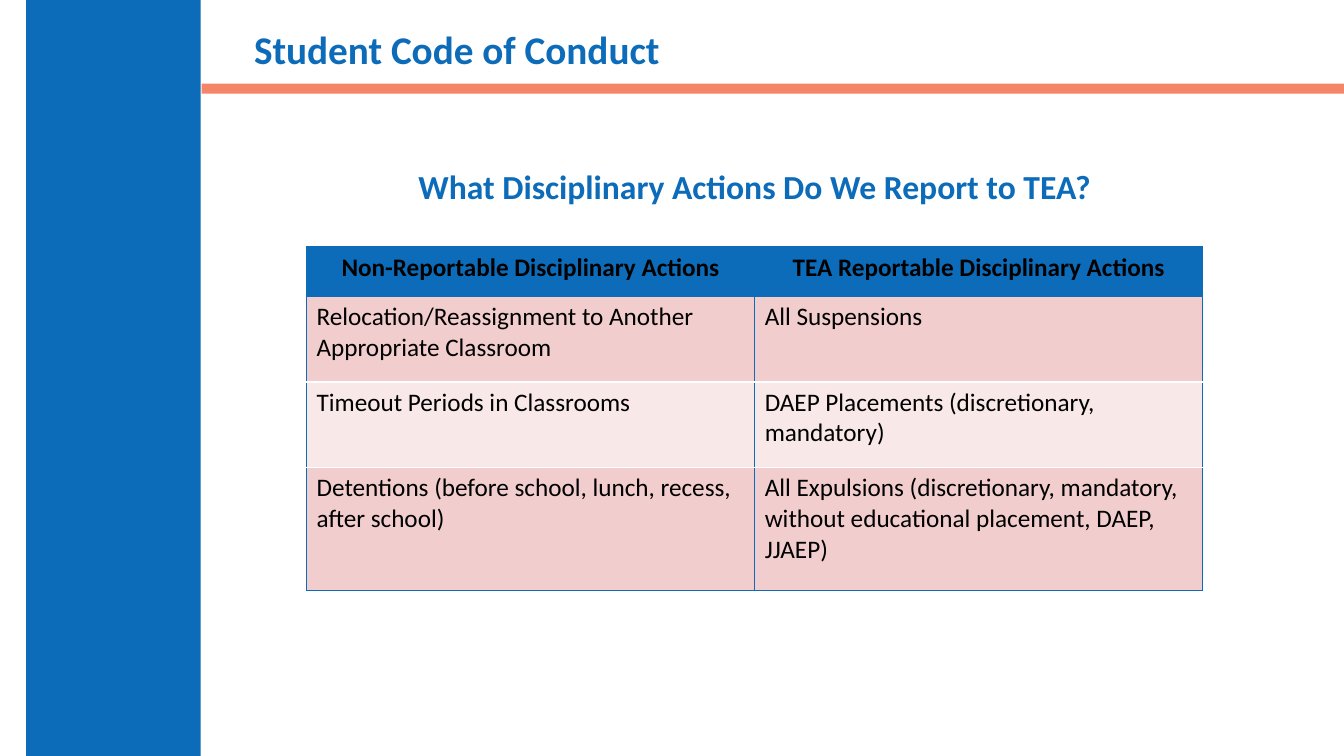
"""Build the Student Code of Conduct slide with its table of disciplinary actions."""
from dataclasses import dataclass

from lxml import etree
from pptx import Presentation
from pptx.dml.color import RGBColor
from pptx.enum.shapes import MSO_SHAPE
from pptx.enum.text import MSO_ANCHOR, MSO_AUTO_SIZE, PP_ALIGN
from pptx.oxml.ns import qn
from pptx.util import Inches, Pt

RECTANGLE = MSO_SHAPE.RECTANGLE
LEFT, CENTER = PP_ALIGN.LEFT, PP_ALIGN.CENTER
TOP, MIDDLE = MSO_ANCHOR.TOP, MSO_ANCHOR.MIDDLE
NO_AUTOFIT = MSO_AUTO_SIZE.NONE


@dataclass(frozen=True)
class Theme:
    font: str = "Calibri"
    blue: str = "0D6CB9"
    coral: str = "F16038"
    white: str = "FFFFFF"
    black: str = "000000"
    bands: tuple[str, str] = ("F1CECD", "F8E8E8")
    title_size: int = 28
    heading_size: int = 24
    table_size: int = 18
    border_width: int = 1


@dataclass(frozen=True)
class Box:
    left: float
    top: float
    width: float
    height: float

    def lengths(self) -> tuple:
        return tuple(map(Inches, (self.left, self.top, self.width, self.height)))


@dataclass(frozen=True)
class Bar:
    box: Box
    color: str
    opacity: int = 100


@dataclass(frozen=True)
class Heading:
    text: str
    box: Box
    size: int
    align: PP_ALIGN
    anchor: MSO_ANCHOR


THEME = Theme()
BARS = (
    Bar(Box(2, 0.83, 11.34, 0.1), THEME.coral, 76),
    Bar(Box(0.26, 0, 1.73, 7.5), THEME.blue),
)
TITLE = Heading("Student Code of Conduct", Box(2.42, 0.22, 10.41, 0.59),
                THEME.title_size, LEFT, MIDDLE)
QUESTION = Heading("What Disciplinary Actions Do We Report to TEA?", Box(2.57, 1.64, 9.83, 4.76),
                   THEME.heading_size, CENTER, TOP)
TABLE_BOX = Box(3.04, 2.45, 8.89, 3.41)
ROW_HEIGHTS = (0.49, 0.85, 0.85, 1.22)
ACTIONS = (
    ("Non-Reportable Disciplinary Actions", "TEA Reportable Disciplinary Actions"),
    ("Relocation/Reassignment to Another Appropriate Classroom", "All Suspensions"),
    ("Timeout Periods in Classrooms", "DAEP Placements (discretionary, mandatory)"),
    ("Detentions (before school, lunch, recess, after school)",
     "All Expulsions (discretionary, mandatory, without educational placement, DAEP, JJAEP)"),
)


def style_font(paragraph, size: int, color: str, bold: bool) -> None:
    font = paragraph.font
    font.name, font.size, font.bold = THEME.font, Pt(size), bold
    font.color.rgb = RGBColor.from_string(color)


def draw_bar(slide, bar: Bar) -> None:
    shape = slide.shapes.add_shape(RECTANGLE, *bar.box.lengths())
    shape.shadow.inherit = False
    shape.line.fill.background()
    shape.fill.solid()
    shape.fill.fore_color.rgb = RGBColor.from_string(bar.color)
    if bar.opacity < 100:
        color = shape.fill._xPr.find(f".//{qn('a:srgbClr')}")
        etree.SubElement(color, qn("a:alpha"), val=str(bar.opacity * 1000))


def fill_placeholder(placeholder, heading: Heading) -> None:
    (placeholder.left, placeholder.top,
     placeholder.width, placeholder.height) = heading.box.lengths()
    frame = placeholder.text_frame
    frame.text = heading.text
    frame.word_wrap = True
    frame.auto_size = NO_AUTOFIT
    frame.vertical_anchor = heading.anchor
    paragraph = frame.paragraphs[0]
    properties = paragraph._p.get_or_add_pPr()
    properties.set("marL", "0")
    properties.set("indent", "0")
    etree.SubElement(properties, qn("a:buNone"))
    paragraph.alignment = heading.align
    paragraph.line_spacing = 0.9
    paragraph.space_before = Pt(0)
    style_font(paragraph, heading.size, THEME.blue, True)


def set_borders(cell, top: str, bottom: str) -> None:
    properties = cell._tc.get_or_add_tcPr()
    for side, color in zip("LRTB", (THEME.blue, THEME.blue, top, bottom)):
        line = etree.SubElement(properties, qn(f"a:ln{side}"), w=str(Pt(THEME.border_width)))
        fill = etree.SubElement(line, qn("a:solidFill"))
        etree.SubElement(fill, qn("a:srgbClr"), val=color)


def draw_table(slide) -> None:
    row_count, column_count = len(ACTIONS), len(ACTIONS[0])
    table = slide.shapes.add_table(row_count, column_count, *TABLE_BOX.lengths()).table
    edges = [THEME.blue] * 2 + [THEME.white] * (row_count - 2) + [THEME.blue]
    for row_index, (texts, height) in enumerate(zip(ACTIONS, ROW_HEIGHTS)):
        table.rows[row_index].height = Inches(height)
        is_header = row_index == 0
        fill_color = THEME.blue if is_header else THEME.bands[(row_index - 1) % 2]
        for column_index, text in enumerate(texts):
            cell = table.cell(row_index, column_index)
            set_borders(cell, edges[row_index], edges[row_index + 1])
            cell.fill.solid()
            cell.fill.fore_color.rgb = RGBColor.from_string(fill_color)
            cell.text = text
            paragraph = cell.text_frame.paragraphs[0]
            paragraph.alignment = CENTER if is_header else LEFT
            style_font(paragraph, THEME.table_size, THEME.black, is_header)


def main() -> None:
    presentation = Presentation()
    presentation.slide_width, presentation.slide_height = Inches(13.33), Inches(7.5)
    slide = presentation.slides.add_slide(presentation.slide_layouts[1])
    for bar in BARS:
        draw_bar(slide, bar)
    fill_placeholder(slide.shapes.title, TITLE)
    fill_placeholder(slide.placeholders[1], QUESTION)
    draw_table(slide)
    presentation.save("out.pptx")


if __name__ == "__main__":
    main()
